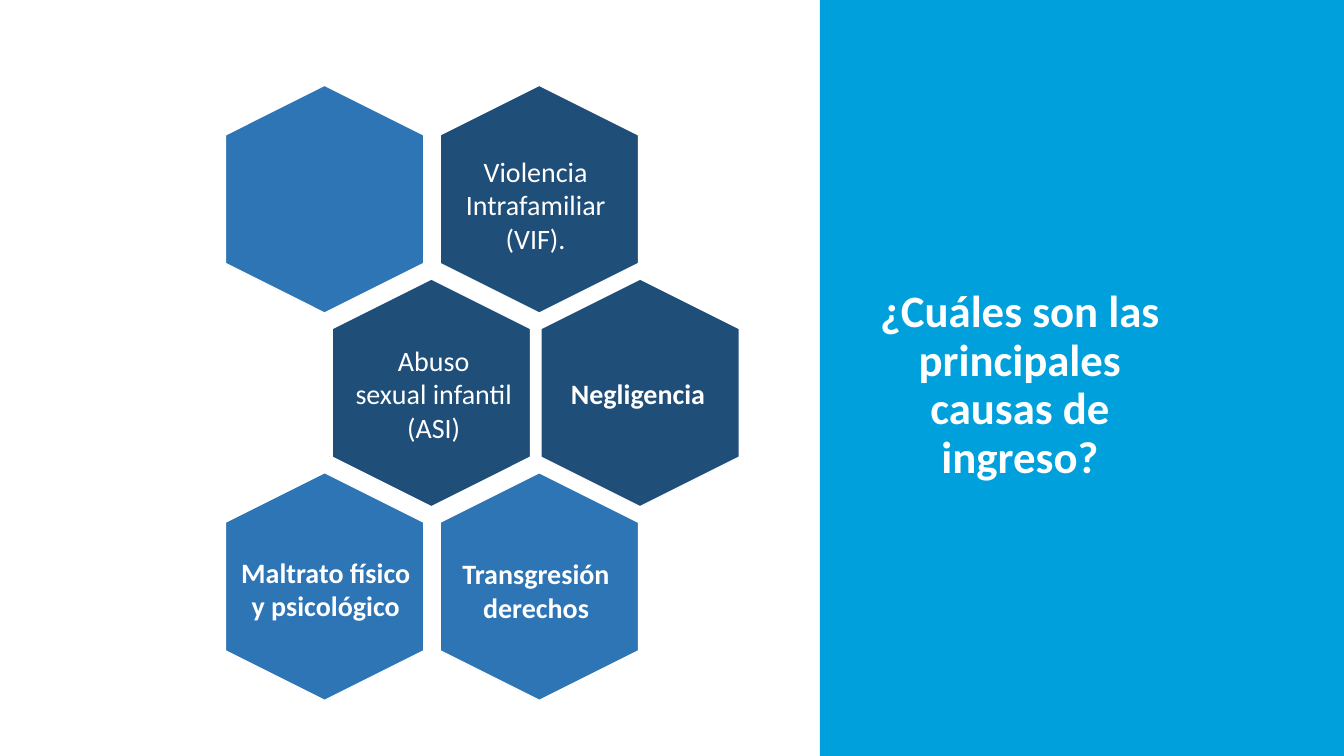
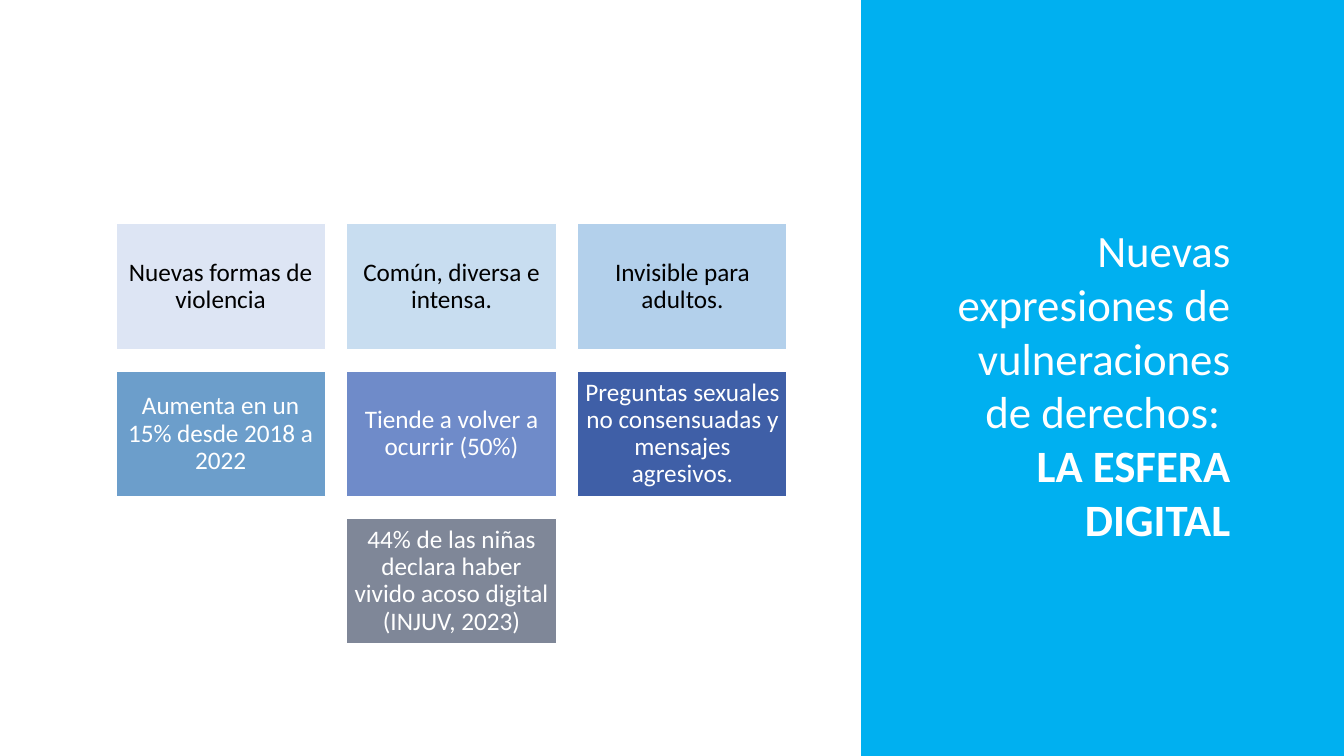
from dataclasses import dataclass

from lxml.etree import SubElement
from pptx import Presentation
from pptx.dml.color import RGBColor
from pptx.enum.shapes import MSO_SHAPE
from pptx.enum.text import MSO_ANCHOR, PP_ALIGN
from pptx.oxml.ns import qn
from pptx.shapes.autoshape import Shape
from pptx.slide import Slide
from pptx.util import Cm, Pt

FONT = "Calibri"
SLIDE_WIDTH, SLIDE_HEIGHT = 33.87, 19.05  # all lengths in centimetres

WHITE = RGBColor(0xFF, 0xFF, 0xFF)
BLACK = RGBColor(0x00, 0x00, 0x00)
CAUSES_PANEL = RGBColor(0x00, 0xA0, 0xDC)
DIGITAL_PANEL = RGBColor(0x00, 0xB0, 0xF0)
DARK_BLUE = RGBColor(0x1F, 0x4E, 0x79)
MID_BLUE = RGBColor(0x2E, 0x75, 0xB6)
PALE_LAVENDER = RGBColor(0xDA, 0xE3, 0xF3)
PALE_BLUE = RGBColor(0xBD, 0xD7, 0xEE)
LIGHT_BLUE = RGBColor(0x9D, 0xC3, 0xE6)
PERIWINKLE = RGBColor(0x6F, 0x8B, 0xC9)
INDIGO = RGBColor(0x3F, 0x5F, 0xA7)
NAVY = RGBColor(0x00, 0x11, 0x32)

HEXAGON_LENGTH, HEXAGON_BREADTH = 5.74, 5.0
HEXAGON_TOP_CENTRE, HEXAGON_ROW_PITCH = 5.02, 4.88

TILE_WIDTH, TILE_HEIGHT, TILE_GAP = 5.28, 3.17, 0.54
TILES_LEFT, TILES_TOP = 2.92, 5.64


@dataclass(frozen=True)
class Box:
    left: float
    top: float
    width: float
    height: float

    def lengths(self) -> tuple[Cm, Cm, Cm, Cm]:
        return Cm(self.left), Cm(self.top), Cm(self.width), Cm(self.height)


@dataclass(frozen=True)
class Cause:
    """A hexagon; the shifts move its label away from its centre."""
    label: str
    fill: RGBColor
    bold: bool = False
    shift_x: float = 0
    shift_y: float = 0


@dataclass(frozen=True)
class CauseRow:
    first_centre: float
    pitch: float
    causes: tuple[Cause, ...]


@dataclass(frozen=True)
class Tile:
    column: int
    row: int
    text: str
    fill: RGBColor
    opacity: int = 100
    color: RGBColor = WHITE


CAUSE_ROWS = (
    CauseRow(8.18, 5.41, (
        Cause("", MID_BLUE),
        Cause("Violencia\vIntrafamiliar\v(VIF).", DARK_BLUE, False, -0.09, 0.14),
    )),
    CauseRow(10.87, 5.26, (
        Cause("Abuso\vsexual infantil\v(ASI)", DARK_BLUE, False, 0.06, 0.02),
        Cause("Negligencia", DARK_BLUE, True, -0.05, 0.02),
    )),
    CauseRow(8.18, 5.41, (
        Cause("Maltrato físico\vy psicológico", MID_BLUE, True, 0.03, 0.06),
        Cause("Transgresión\vderechos", MID_BLUE, True, -0.08, 0.1),
    )),
)

TILES = (
    Tile(0, 0, "Nuevas formas de violencia", PALE_LAVENDER, 90, BLACK),
    Tile(1, 0, "Común, diversa e intensa.", PALE_BLUE, 83, BLACK),
    Tile(2, 0, "Invisible para adultos.", LIGHT_BLUE, 77, BLACK),
    Tile(0, 1, "Aumenta en un 15% desde 2018 a 2022", MID_BLUE, 70),
    Tile(1, 1, "Tiende a volver a ocurrir (50%)", PERIWINKLE),
    Tile(2, 1, "Preguntas sexuales no consensuadas y mensajes agresivos.", INDIGO),
    Tile(1, 2, "44% de las niñas declara haber vivido acoso digital (INJUV, 2023)",
         NAVY, 50),
)


def add_filled_shape(slide: Slide, kind: MSO_SHAPE, box: Box, fill: RGBColor,
                     opacity: int = 100) -> Shape:
    shape = slide.shapes.add_shape(kind, *box.lengths())
    shape.shadow.inherit = False
    shape.fill.solid()
    shape.fill.fore_color.rgb = fill
    if opacity < 100:
        color = shape.fill._xPr.find(qn("a:solidFill"))[0]
        SubElement(color, qn("a:alpha")).set("val", str(opacity * 1000))
    shape.line.color.rgb = WHITE
    shape.line.width = Pt(1)
    return shape


def write_text(shape: Shape, text: str, size: int, color: RGBColor = WHITE,
               bold: bool = False, alignment: PP_ALIGN = PP_ALIGN.CENTER,
               anchor: MSO_ANCHOR = MSO_ANCHOR.MIDDLE, wrap: bool = True,
               line_spacing: float = 1.0) -> None:
    frame = shape.text_frame
    frame.word_wrap = wrap
    frame.vertical_anchor = anchor
    paragraph = frame.paragraphs[0]
    paragraph.text = text
    paragraph.alignment = alignment
    paragraph.line_spacing = line_spacing
    paragraph.font.name = FONT
    paragraph.font.size = Pt(size)
    paragraph.font.bold = bold
    paragraph.font.color.rgb = color


def add_title_panel(slide: Slide, left: float, fill: RGBColor,
                    title_box: Box) -> Shape:
    """Draw the full-height panel on the right and return its title box."""
    panel_box = Box(left, 0, SLIDE_WIDTH - left, SLIDE_HEIGHT)
    panel = add_filled_shape(slide, MSO_SHAPE.RECTANGLE, panel_box, fill)
    panel.line.fill.background()
    return slide.shapes.add_textbox(*title_box.lengths())


def add_cause(slide: Slide, cause: Cause, centre_x: float, centre_y: float) -> None:
    def centred(width: float, height: float) -> Box:
        return Box(centre_x - width / 2, centre_y - height / 2, width, height)

    hexagon = add_filled_shape(slide, MSO_SHAPE.HEXAGON,
                               centred(HEXAGON_LENGTH, HEXAGON_BREADTH), cause.fill)
    hexagon.rotation = 90
    if cause.label:
        label = slide.shapes.add_textbox(*centred(HEXAGON_BREADTH, 2.8).lengths())
        label.left += Cm(cause.shift_x)
        label.top += Cm(cause.shift_y)
        write_text(label, cause.label, 20, bold=cause.bold, wrap=False)


def add_tile(slide: Slide, tile: Tile) -> None:
    box = Box(TILES_LEFT + tile.column * (TILE_WIDTH + TILE_GAP),
              TILES_TOP + tile.row * (TILE_HEIGHT + TILE_GAP),
              TILE_WIDTH, TILE_HEIGHT)
    shape = add_filled_shape(slide, MSO_SHAPE.RECTANGLE, box, tile.fill, tile.opacity)
    frame = shape.text_frame
    frame.margin_left = frame.margin_right = Cm(0.18)
    frame.margin_top = frame.margin_bottom = Cm(0.18)
    write_text(shape, tile.text, 18, tile.color, line_spacing=0.9)


def build_causes_slide(slide: Slide) -> None:
    title = add_title_panel(slide, 20.66, CAUSES_PANEL, Box(21.54, 8.64, 8.33, 2.18))
    write_text(title, "¿Cuáles son las principales causas de ingreso?", 32,
               bold=True, line_spacing=0.9)
    for row_index, row in enumerate(CAUSE_ROWS):
        centre_y = HEXAGON_TOP_CENTRE + row_index * HEXAGON_ROW_PITCH
        for column, cause in enumerate(row.causes):
            add_cause(slide, cause, row.first_centre + column * row.pitch, centre_y)


def build_digital_slide(slide: Slide) -> None:
    title = add_title_panel(slide, 21.7, DIGITAL_PANEL, Box(23.34, 5.49, 7.92, 8.46))
    write_text(title, "Nuevas expresiones de vulneraciones de derechos: \v", 32,
               alignment=PP_ALIGN.RIGHT, anchor=MSO_ANCHOR.TOP)
    emphasis = title.text_frame.paragraphs[0].add_run()
    emphasis.text = "LA ESFERA DIGITAL"
    emphasis.font.bold = True
    for tile in TILES:
        add_tile(slide, tile)


def main() -> None:
    presentation = Presentation()
    presentation.slide_width = Cm(SLIDE_WIDTH)
    presentation.slide_height = Cm(SLIDE_HEIGHT)
    blank_layout = presentation.slide_layouts[6]
    for build in (build_causes_slide, build_digital_slide):
        build(presentation.slides.add_slide(blank_layout))
    presentation.save("out.pptx")


if __name__ == "__main__":
    main()
